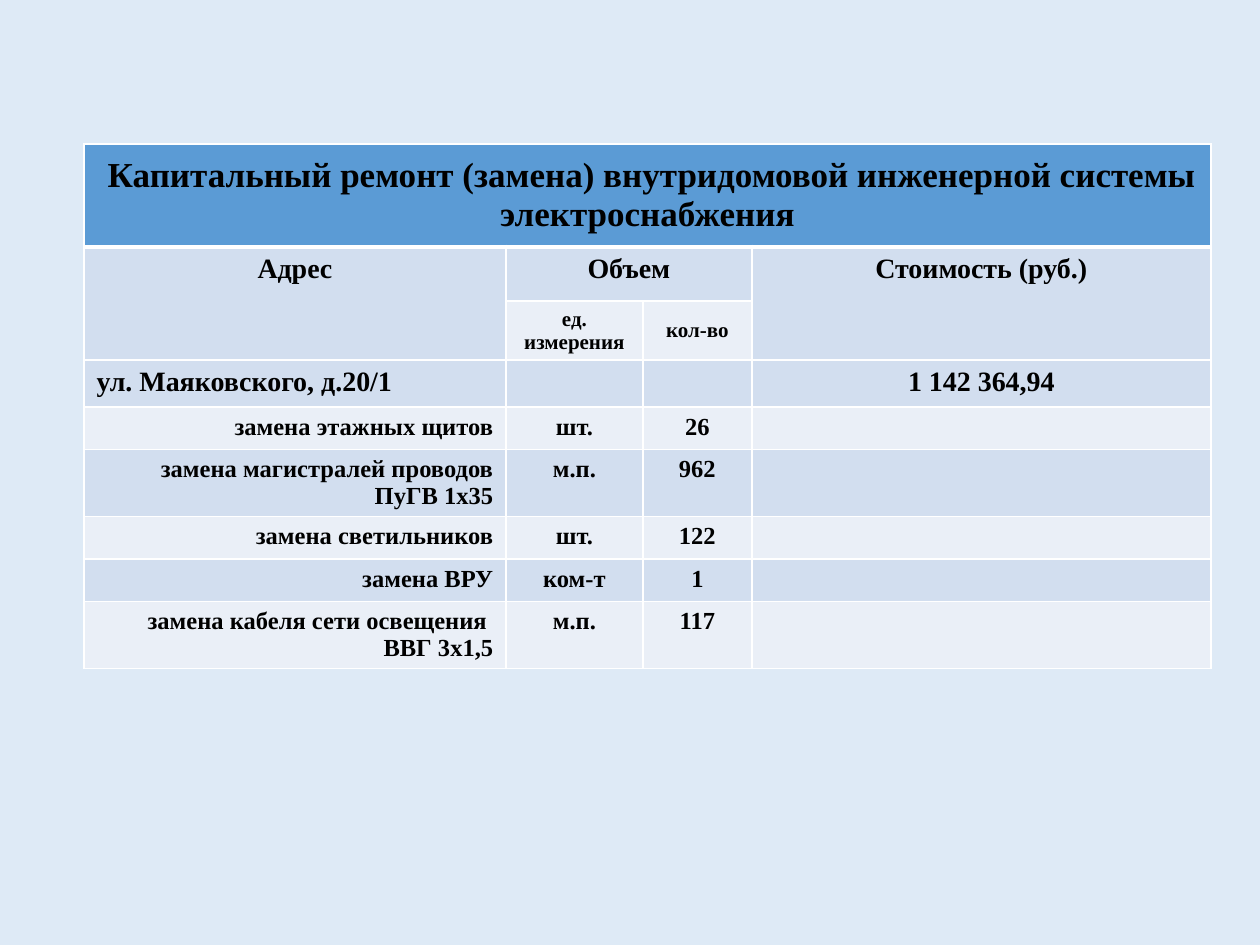
from lxml import etree
from pptx import Presentation, util as u
from pptx.dml.color import RGBColor
from pptx.enum import text
from pptx.oxml.ns import qn

# Content: cells by row, None where a merged cell covers
TITLE = " Капитальный ремонт (замена) внутридомовой инженерной системы электроснабжения"
ROWS = [
    [TITLE, None, None, None],
    ["Адрес", "Объем", None, "Стоимость (руб.)"],
    [None, "ед.\nизмерения", "кол-во", None],
    ["ул. Маяковского, д.20/1", "", "", "1 142 364,94"],
    ["замена этажных щитов", "шт.", "26", ""],
    ["замена магистралей проводов ПуГВ 1х35", "м.п.", "962", ""],
    ["замена светильников", "шт.", "122", ""],
    ["замена ВРУ", "ком-т", "1", ""],
    ["замена кабеля сети освещения \nВВГ 3х1,5", "м.п.", "117", ""],
]
MERGES = [(0, 0, 0, 3), (1, 0, 2, 0), (1, 1, 1, 2), (1, 3, 2, 3)]
SIZES = [20, 16, 12, 16] + [14] * 5
WIDTHS = [422, 137, 109, 459]
HEIGHTS = [103, 54, 59, 44, 39, 67, 40, 40, 66]
LEFT, TOP = 84, 144
HEAD, BANDS = "5B9BD5", ("EAEFF7", "D2DEEF")
FONT = {"name": "Times New Roman", "bold": True}
PX = u.Inches(1) / 126


def px(n):
    return u.Emu(round(n * PX))


def rgb(code):
    return RGBColor.from_string(code)


def border(cell, row):
    props = cell._tc.get_or_add_tcPr()
    for side in "LRTB":
        thick = (row, side) in ((0, "B"), (1, "T"))
        line = etree.SubElement(props, qn(f"a:ln{side}"), w=str(u.Pt(3 if thick else 1)))
        fill = etree.SubElement(line, qn("a:solidFill"))
        etree.SubElement(fill, qn("a:srgbClr"), val="FFFFFF")


def align(row, col):
    if col or row < 3:
        return text.PP_ALIGN.CENTER
    return text.PP_ALIGN.LEFT if row == 3 else text.PP_ALIGN.RIGHT


def write(cell, words, row, col):
    frame = cell.text_frame
    for i, line in enumerate(words.split("\n")):
        par = frame.paragraphs[0] if i == 0 else frame.add_paragraph()
        par.alignment = align(row, col)
        if not line:
            # Keeps an empty cell from stretching its row
            etree.SubElement(par._p, qn("a:endParaRPr"), sz=str(SIZES[row] * 100))
            continue
        run = par.add_run()
        run.text = line
        for key, val in FONT.items():
            setattr(run.font, key, val)
        run.font.size = u.Pt(SIZES[row])
        run.font.color.rgb = rgb("000000")


# Slide
deck = Presentation()
deck.slide_width, deck.slide_height = px(1260), px(945)
slide = deck.slides.add_slide(deck.slide_layouts[6])
back = slide.background.fill
back.solid()
back.fore_color.rgb = rgb("DEEAF6")

# Table grid
grid = slide.shapes.add_table(len(ROWS), len(WIDTHS), px(LEFT), px(TOP),
                              px(sum(WIDTHS)), px(sum(HEIGHTS))).table
for col, wide in zip(grid.columns, WIDTHS):
    col.width = px(wide)
for row, high in zip(grid.rows, HEIGHTS):
    row.height = px(high)
for r1, c1, r2, c2 in MERGES:
    grid.cell(r1, c1).merge(grid.cell(r2, c2))

# Cells
for r, row in enumerate(ROWS):
    for c, words in enumerate(row):
        cell = grid.cell(r, c)
        border(cell, r)
        cell.fill.solid()
        cell.fill.fore_color.rgb = rgb(BANDS[r % 2] if r else HEAD)
        if r in (0, 2):
            cell.vertical_anchor = text.MSO_ANCHOR.MIDDLE
        write(cell, words or "", r, c)

deck.save("out.pptx")
